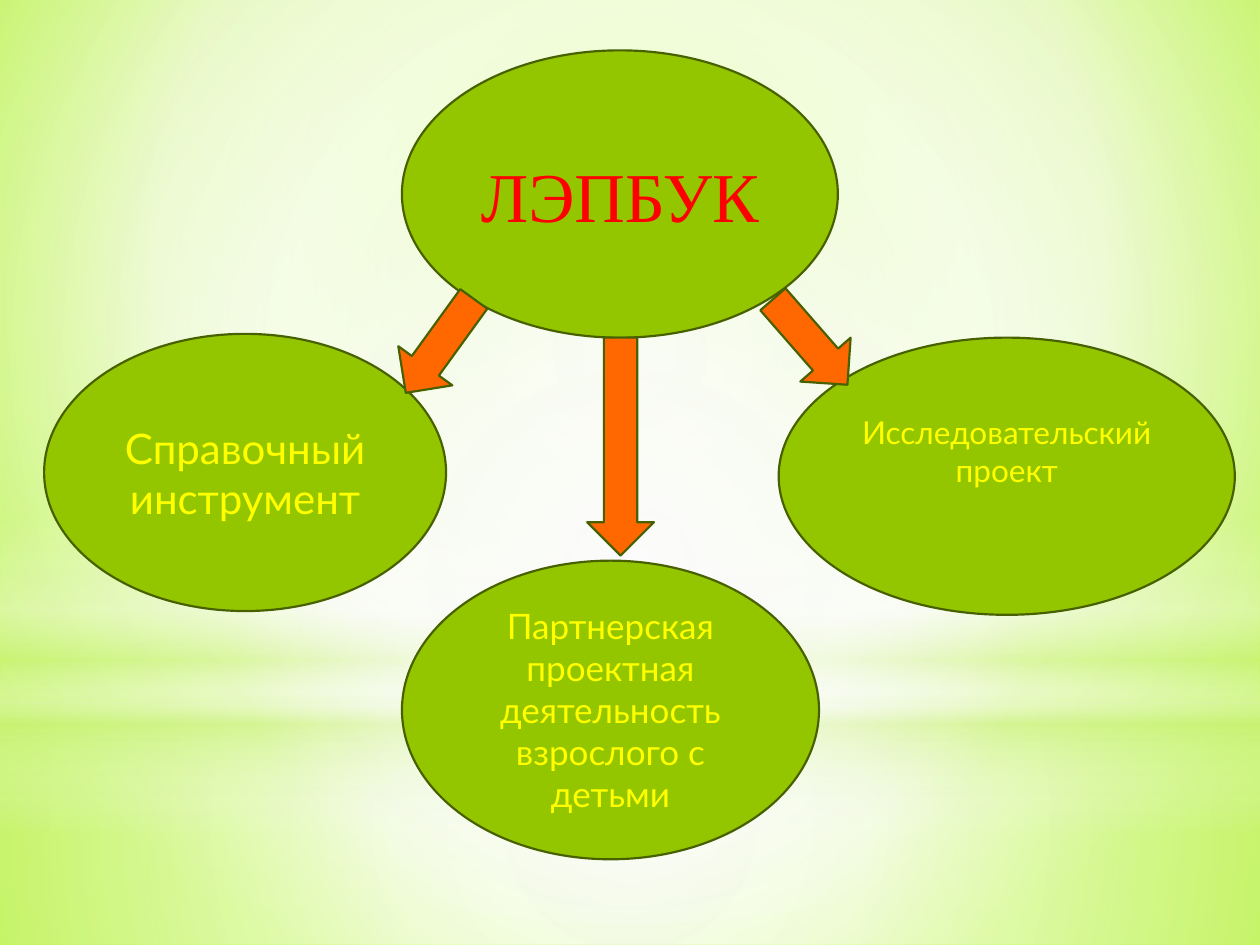
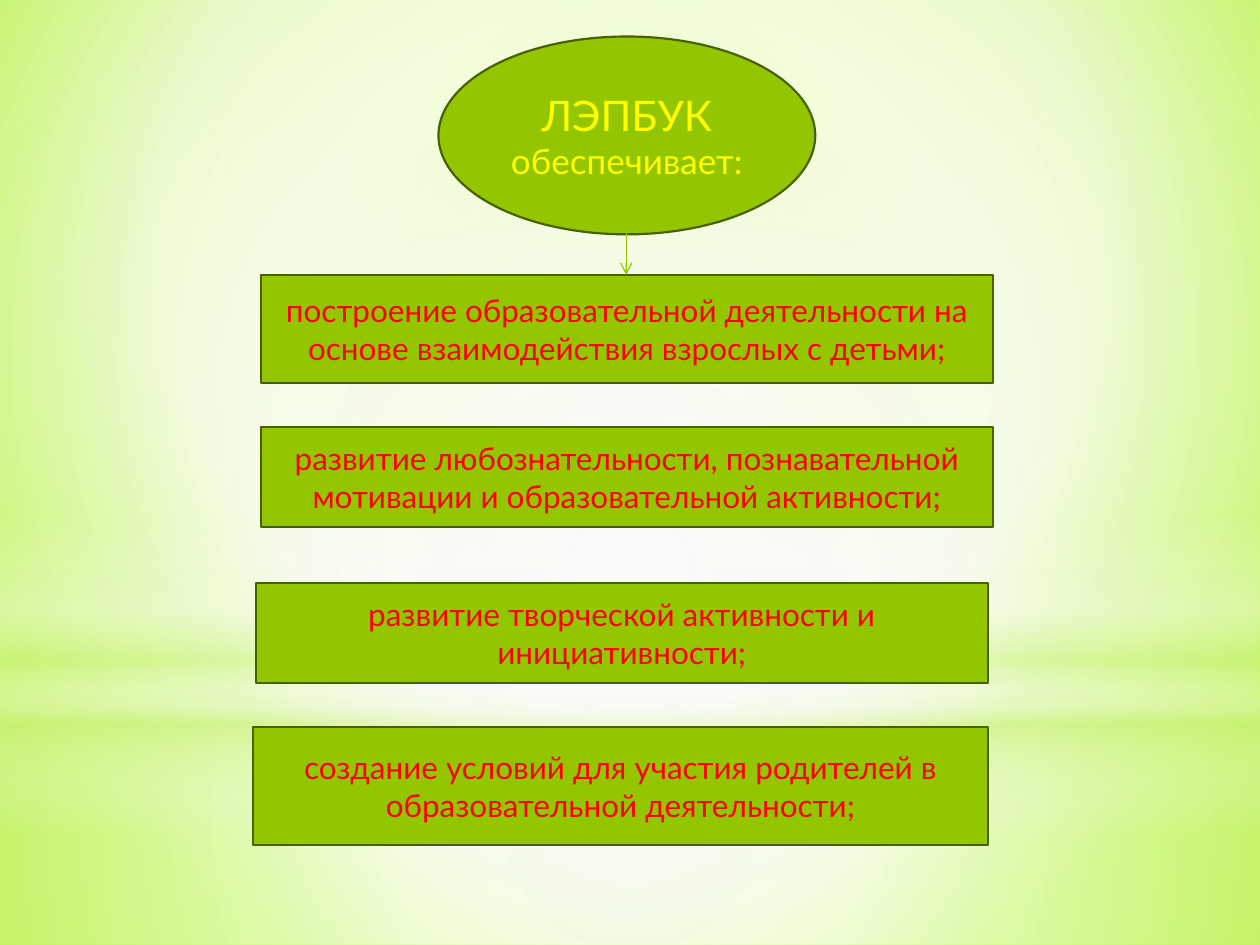
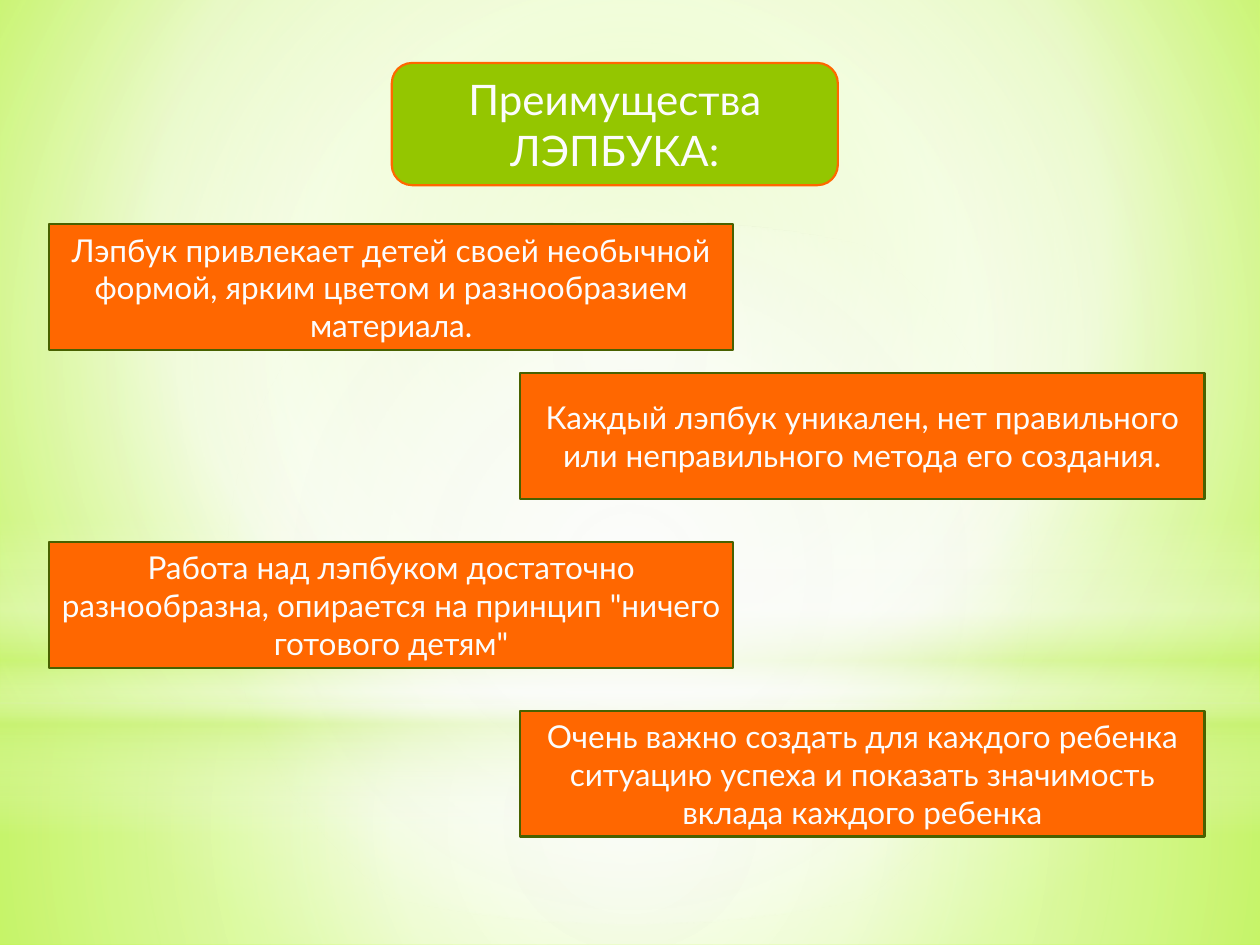
from lxml.etree import SubElement
from pptx import Presentation
from pptx.dml.color import RGBColor
from pptx.enum.shapes import MSO_CONNECTOR, MSO_SHAPE
from pptx.enum.text import MSO_ANCHOR, PP_ALIGN
from pptx.oxml.ns import qn
from pptx.util import Inches, Pt

UNIT = Inches(0.1)
COLS, ROWS = 100, 75
GREEN, DARK, ORANGE = "94C600", "486100", "FF6700"
RED, YELLOW, WHITE, PALE = "FF0000", "FFFF00", "FCFCFC", "CAF278"
FONT = "Lato"
CENTRE = (50, 50, 50, 50)


def rgb(value):
    """Turn a hex string into a colour."""
    return RGBColor.from_string(value)


def grid(*cells):
    """Turn grid columns and rows into lengths."""
    return [round(cell * UNIT) for cell in cells]


def paint_gradient(parent, stops, focus=None):
    """Replace a solid fill by a radial gradient, or a vertical one without focus."""
    solid = parent.find(qn("a:solidFill"))
    grad = parent.makeelement(qn("a:gradFill"), {"rotWithShape": "1"})
    parent.replace(solid, grad)
    stop_list = SubElement(grad, qn("a:gsLst"))
    for position, color, opacity in stops:
        gs = SubElement(stop_list, qn("a:gs"), pos=str(position * 1000))
        clr = SubElement(gs, qn("a:srgbClr"), val=color)
        if opacity < 100:
            SubElement(clr, qn("a:alpha"), val=str(opacity * 1000))
    if focus:
        route = SubElement(grad, qn("a:path"), {"path": "circle"})
        sides = {side: str(share * 1000) for side, share in zip("ltrb", focus)}
        SubElement(route, qn("a:fillToRect"), sides)
    else:
        SubElement(grad, qn("a:lin"), ang="5400000", scaled="0")


def add_block(slide, kind, box, fill=GREEN, line=DARK):
    """Add a flat filled shape; without a line colour it has no outline."""
    sp = slide.shapes.add_shape(kind, *grid(*box))
    sp.shadow.inherit = False
    sp.fill.solid()
    sp.fill.fore_color.rgb = rgb(fill)
    if line:
        sp.line.color.rgb = rgb(line)
        sp.line.width = Pt(1.25)
    else:
        sp.line.fill.background()
    return sp


def format_run(r, size, color, font=FONT):
    """Set the font of one run."""
    r.font.size = Pt(size)
    r.font.name = font
    r.font.color.rgb = rgb(color)


def write(sp, text, size, color, font=FONT):
    """Write centred text in a shape and return its paragraph."""
    tf = sp.text_frame
    tf.word_wrap = True
    tf.vertical_anchor = MSO_ANCHOR.MIDDLE
    tf.text = text
    p = tf.paragraphs[0]
    p.alignment = PP_ALIGN.CENTER
    format_run(p.runs[0], size, color, font)
    return p


def add_block_arrow(slide, box, angle):
    """Add an orange block arrow turned by an angle."""
    add_block(slide, MSO_SHAPE.RIGHT_ARROW, box, ORANGE).rotation = angle


def add_thin_arrow(slide, start, end):
    """Add a thin green line with an open arrowhead at its end."""
    cxn = slide.shapes.add_connector(MSO_CONNECTOR.STRAIGHT, *grid(*start, *end))
    cxn.line.color.rgb = rgb(GREEN)
    cxn.line.width = Pt(0.75)
    SubElement(cxn.line._get_or_add_ln(), qn("a:tailEnd"), type="arrow")
    SubElement(cxn.element.spPr, qn("a:effectLst"))


def dress_master(prs, slide):
    """Give the master its background and soft light bands."""
    master = prs.slide_master
    master.background.fill.solid()
    paint_gradient(master.element.find(".//" + qn("p:bgPr")),
                   [(0, "CAFF60", 100), (60, "F7FFE7", 100), (100, "B7FF29", 100)],
                   (20, 10, 20, 60))
    rect, oval = MSO_SHAPE.RECTANGLE, MSO_SHAPE.OVAL
    bands = [
        (rect, 55.8, 19.2, [(0, WHITE, 91), (37, WHITE, 76), (100, PALE, 79)], CENTRE),
        (rect, 0, 55.8, [(0, WHITE, 89), (48, WHITE, 62), (100, PALE, 79)], CENTRE),
        (rect, 41.2, 25, [(0, WHITE, 0), (29, WHITE, 30), (45, PALE, 40),
                          (55, WHITE, 26), (65, PALE, 60), (100, WHITE, 0)], None),
        (oval, 17.5, 55.8, [(0, WHITE, 100), (56, WHITE, 0)], CENTRE),
    ]
    for index, (kind, top, height, stops, focus) in enumerate(bands):
        sp = add_block(slide, kind, (0, top, COLS, height), WHITE, None)
        paint_gradient(sp.element.spPr, stops, focus)
        master.shapes.element.insert(2 + index, sp.element)


def build_roles(slide):
    """Show the three roles of a lapbook."""
    sp = add_block(slide, MSO_SHAPE.OVAL, (31.9, 4, 34.6, 22.8))
    write(sp, "ЛЭПБУК", 40, RED, "Times New Roman")
    roles = [
        ("Справочный инструмент", 24, (3.5, 26.5, 31.9, 22)),
        ("Партнерская проектная деятельность взрослого с детьми", 20,
         (31.9, 44.5, 33.1, 23.7)),
        ("Исследовательский проект", 18, (61.8, 26.8, 36.2, 22)),
    ]
    for text, size, box in roles:
        sp = add_block(slide, MSO_SHAPE.OVAL, box)
        write(sp, text, size, YELLOW)
    sp.text_frame.margin_bottom = Inches(0.45)
    for left, top, length, angle in [(30.3, 24.8, 9.2, 125.9), (59.8, 24.5, 9, 48.9),
                                     (40.6, 32.8, 17.3, 90)]:
        add_block_arrow(slide, (left, top, length, 5.3), angle)


def build_outcomes(slide):
    """List what a lapbook provides."""
    outcomes = [
        ("построение образовательной деятельности на основе взаимодействия "
         "взрослых с детьми;", (20.7, 21.8, 58.1, 8.6)),
        ("развитие любознательности, познавательной мотивации и "
         "образовательной активности;", (20.7, 33.9, 58.1, 7.9)),
        ("развитие творческой активности и инициативности;",
         (20.3, 46.3, 58.1, 7.9)),
        ("создание условий для участия родителей в образовательной "
         "деятельности;", (20.1, 57.7, 58.3, 9.4)),
    ]
    for text, box in outcomes:
        write(add_block(slide, MSO_SHAPE.RECTANGLE, box), text, 18, RED)
    sp = add_block(slide, MSO_SHAPE.OVAL, (34.8, 2.9, 29.9, 15.7))
    p = write(sp, "ЛЭПБУК ", 24, YELLOW)
    r = p.add_run()
    r.text = "обеспечивает:"
    format_run(r, 20, YELLOW)
    add_thin_arrow(slide, (49.7, 17.9), (49.7, 21.8))


def build_advantages(slide):
    """Set the advantages alternately left and right."""
    sp = add_block(slide, MSO_SHAPE.ROUNDED_RECTANGLE, (31.1, 5, 35.4, 9.7), line=ORANGE)
    write(sp, "Преимущества ЛЭПБУКА:", 24, WHITE)
    advantages = [
        (17.8, "Лэпбук привлекает детей своей необычной формой, ярким цветом и "
               "разнообразием материала."),
        (29.6, "Каждый лэпбук уникален, нет правильного или неправильного метода "
               "его создания."),
        (43, "Работа над лэпбуком достаточно разнообразна, опирается на принцип "
             "\"ничего готового детям\""),
        (56.4, "Очень важно создать для каждого ребенка ситуацию успеха и показать "
               "значимость вклада каждого ребенка"),
    ]
    for index, (top, text) in enumerate(advantages):
        left = 41.3 if index % 2 else 3.9
        sp = add_block(slide, MSO_SHAPE.RECTANGLE, (left, top, 54.3, 10), ORANGE)
        write(sp, text, 18, WHITE)


def main():
    """Build and save the presentation."""
    prs = Presentation()
    prs.slide_width, prs.slide_height = grid(COLS, ROWS)
    blank = prs.slide_layouts[6]
    for index, build in enumerate([build_roles, build_outcomes, build_advantages]):
        slide = prs.slides.add_slide(blank)
        if index == 0:
            dress_master(prs, slide)
        build(slide)
    prs.save("out.pptx")


if __name__ == "__main__":
    main()
